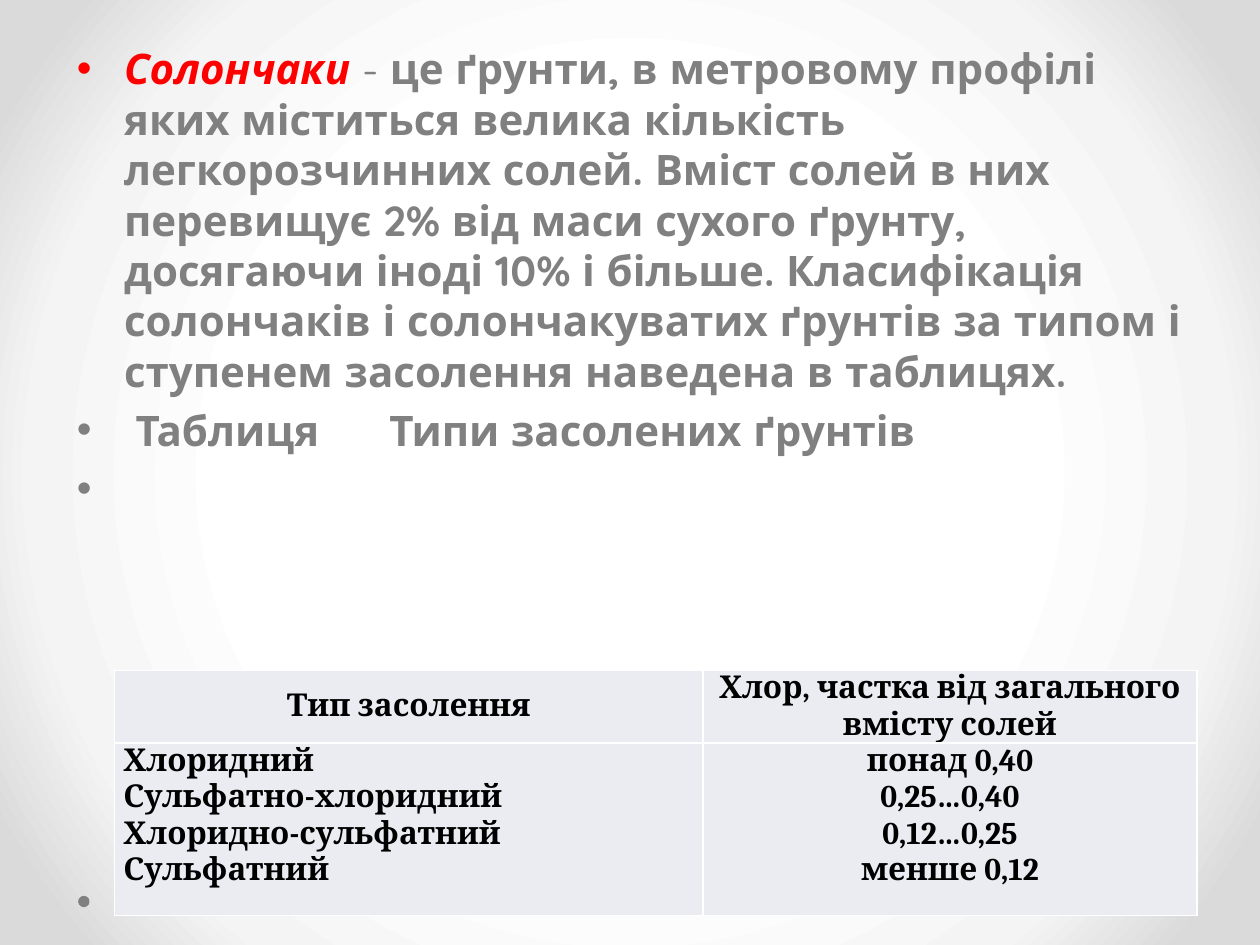
from dataclasses import dataclass

import lxml.etree
import pptx
import pptx.dml.color
import pptx.enum.shapes
import pptx.enum.text
import pptx.oxml
import pptx.oxml.ns
import pptx.util

Inches = pptx.util.Inches
Pt = pptx.util.Pt
Align = pptx.enum.text.PP_ALIGN
Anchor = pptx.enum.text.MSO_ANCHOR
qn = pptx.oxml.ns.qn

COLORS = {
    "term": "FF0000",
    "body": "808080",
    "table_text": "000000",
    "cell": "EAECF2",
    "border": "FFFFFF",
}
BACKGROUND_STOPS = ((50, "FFFFFF"), (76, "F4F4F4"), (92, "DADADA"))
BODY_FONT = "Quicksand"
TABLE_FONT = "Cambria"


@dataclass(frozen=True)
class Span:
    text: str
    color: str = "body"
    bold: bool = True
    italic: bool = False


@dataclass(frozen=True)
class CellText:
    lines: tuple[str, ...]
    align: Align
    anchor: Anchor = Anchor.TOP


BULLETS = (
    (
        Span("Солончаки ", "term", italic=True),
        Span("- ", bold=False),
        Span(
            "це ґрунти, в метровому профілі яких міститься велика кількість "
            "легкорозчинних солей. Вміст солей в них перевищує 2% від маси сухого "
            "ґрунту, досягаючи іноді 10% і більше. Класифікація солончаків і "
            "солончакуватих ґрунтів за типом і ступенем засолення наведена в таблицях."
        ),
    ),
    (Span("\u00a0", bold=False), Span("Таблиця\tТипи засолених ґрунтів")),
    (Span("\u00a0", bold=False),),
)

ROWS = (
    (
        CellText(("Тип засолення",), Align.CENTER, Anchor.MIDDLE),
        CellText(("Хлор, частка від загального вмісту солей",), Align.CENTER, Anchor.MIDDLE),
    ),
    (
        CellText(
            ("Хлоридний", "Сульфатно-хлоридний", "Хлоридно-сульфатний", "Сульфатний"),
            Align.JUSTIFY,
        ),
        CellText(("понад 0,40", "0,25…0,40", "0,12…0,25", "менше 0,12"), Align.CENTER),
    ),
)
COLUMN_WIDTHS = (4.67, 3.92)
ROW_HEIGHTS = (0.52, 1.37)


def rgb(name: str) -> pptx.dml.color.RGBColor:
    return pptx.dml.color.RGBColor.from_string(COLORS[name])


def set_background(page) -> None:
    stops = "".join(
        f'<a:gs pos="{position * 1000}"><a:srgbClr val="{color}"/></a:gs>'
        for position, color in BACKGROUND_STOPS
    )
    background = pptx.oxml.parse_xml(
        f'<p:bg {pptx.oxml.ns.nsdecls("p", "a")}><p:bgPr><a:gradFill rotWithShape="1">'
        f'<a:gsLst>{stops}</a:gsLst><a:path path="circle">'
        '<a:fillToRect l="50000" t="50000" r="50000" b="50000"/></a:path>'
        "</a:gradFill><a:effectLst/></p:bgPr></p:bg>"
    )
    page.element.cSld.insert(0, background)


def add_dot(page) -> None:
    dot = page.shapes.add_shape(
        pptx.enum.shapes.MSO_SHAPE.OVAL,
        Inches(0.62), Inches(7.11), Inches(0.09), Inches(0.09),
    )
    dot.shadow.inherit = False
    dot.fill.solid()
    dot.fill.fore_color.rgb = rgb("body")
    dot.line.fill.background()


def set_tab_stop(para, position: float) -> None:
    properties = para._p.get_or_add_pPr()
    tabs = lxml.etree.SubElement(properties, qn("a:tabLst"))
    lxml.etree.SubElement(tabs, qn("a:tab"), pos=str(Inches(position)), algn="l")


def fill_body(box) -> None:
    box.left, box.top = Inches(0.51), Inches(0.29)
    box.width, box.height = Inches(8.99), Inches(6.41)
    frame = box.text_frame
    frame.auto_size = pptx.enum.text.MSO_AUTO_SIZE.NONE
    for index, spans in enumerate(BULLETS):
        para = frame.paragraphs[0] if index == 0 else frame.add_paragraph()
        para.font.size = Pt(24)
        para.font.name = BODY_FONT
        for span in spans:
            run = para.add_run()
            run.text = span.text
            run.font.size = Pt(24)
            run.font.name = BODY_FONT
            run.font.bold = span.bold
            run.font.italic = span.italic
            run.font.color.rgb = rgb(span.color)
            if "\t" in span.text:
                set_tab_stop(para, 2.48)


def set_borders(cell) -> None:
    properties = cell._tc.get_or_add_tcPr()
    for index, side in enumerate(("lnL", "lnR", "lnT", "lnB")):
        line = lxml.etree.Element(qn(f"a:{side}"), w=str(Pt(1)))
        fill = lxml.etree.SubElement(line, qn("a:solidFill"))
        lxml.etree.SubElement(fill, qn("a:srgbClr"), val=COLORS["border"])
        properties.insert(index, line)


def fill_cell(cell, content: CellText) -> None:
    cell.fill.solid()
    cell.fill.fore_color.rgb = rgb("cell")
    cell.vertical_anchor = content.anchor
    cell.margin_left = cell.margin_right = Inches(0.07)
    cell.margin_top = cell.margin_bottom = 0
    set_borders(cell)
    cell.text_frame.text = "\n".join(content.lines)
    for para in cell.text_frame.paragraphs:
        para.alignment = content.align
        para.font.name = TABLE_FONT
        para.font.size = Pt(18)
        para.font.bold = True
        para.font.color.rgb = rgb("table_text")


def add_salinity_table(page) -> None:
    table = page.shapes.add_table(
        len(ROWS), len(COLUMN_WIDTHS), Inches(0.91), Inches(5.32),
        Inches(sum(COLUMN_WIDTHS)), Inches(sum(ROW_HEIGHTS)),
    ).table
    for column, width in zip(table.columns, COLUMN_WIDTHS):
        column.width = Inches(width)
    for row, height, contents in zip(table.rows, ROW_HEIGHTS, ROWS):
        row.height = Inches(height)
        for cell, content in zip(row.cells, contents):
            fill_cell(cell, content)


def main() -> None:
    deck = pptx.Presentation()
    deck.slide_width, deck.slide_height = Inches(10), Inches(7.5)
    page = deck.slides.add_slide(deck.slide_layouts.get_by_name("Title and Content"))
    title = page.shapes.title.element
    title.getparent().remove(title)
    set_background(page)
    fill_body(page.placeholders[1])
    add_dot(page)
    add_salinity_table(page)
    deck.save("out.pptx")


if __name__ == "__main__":
    main()
